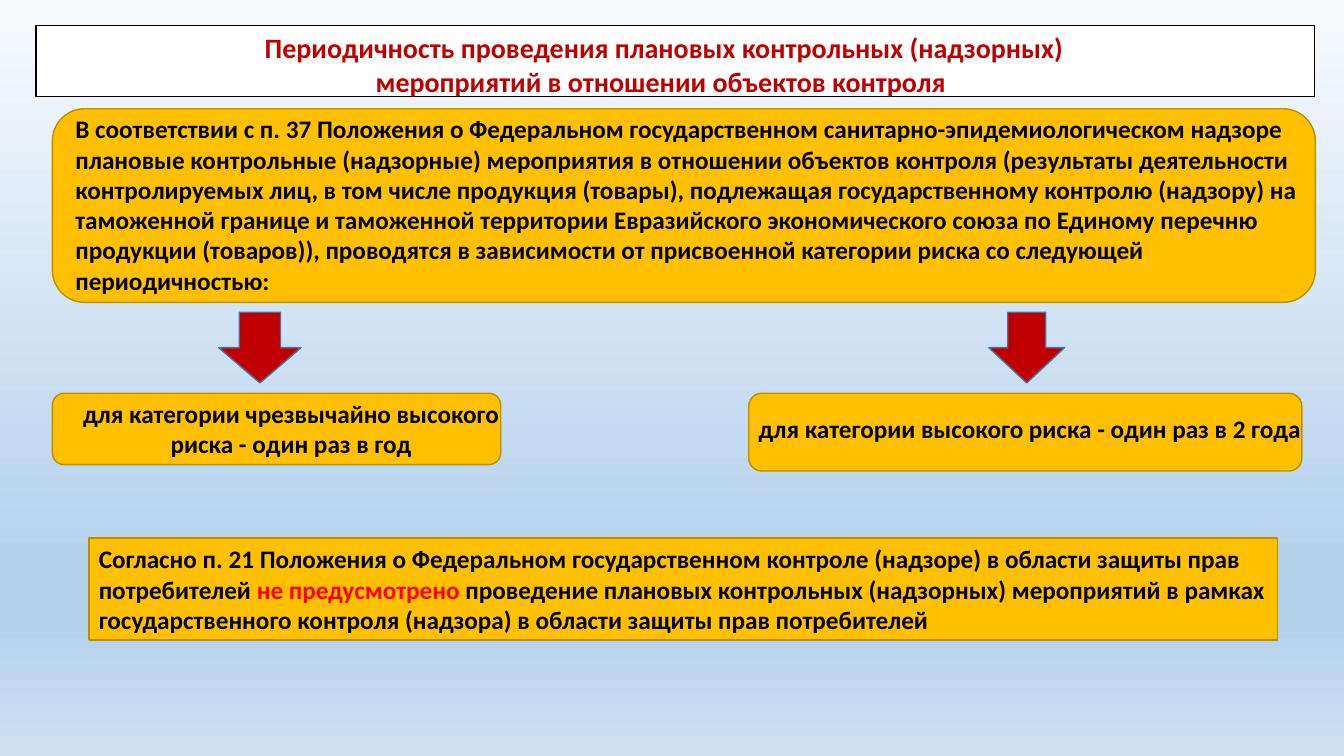
import lxml.etree
import pptx
import pptx.dml.color
import pptx.enum.shapes
import pptx.enum.text
import pptx.oxml.ns
import pptx.util

Cm = pptx.util.Cm
Shape = pptx.enum.shapes.MSO_SHAPE
Align = pptx.enum.text.PP_ALIGN
Anchor = pptx.enum.text.MSO_ANCHOR


def colour(value):
    return pptx.dml.color.RGBColor.from_string(value)


class RiskSlide:
    font = "Calibri"
    black = "000000"
    white = "FFFFFF"
    red = "C00000"
    alert = "FF0000"
    amber = "FFC000"
    amber_edge = "BD8E00"
    blue_edge = "43739E"

    def __init__(self, deck):
        self.slide = deck.slides.add_slide(deck.slide_layouts[5])

    def background(self, stops):
        fill = self.slide.background.fill
        fill.gradient()
        fill.gradient_angle = 270
        qn = pptx.oxml.ns.qn
        stop_list = next(self.slide.element.iter(qn("a:gsLst")))
        for old_stop in list(stop_list):
            stop_list.remove(old_stop)
        for percent, value in stops:
            stop = lxml.etree.SubElement(stop_list, qn("a:gs"), pos=str(percent * 1000))
            lxml.etree.SubElement(stop, qn("a:srgbClr"), val=value)

    def paint(self, shape, fill, edge):
        shape.fill.solid()
        shape.fill.fore_color.rgb = colour(fill)
        shape.line.color.rgb = colour(edge)
        shape.line.width = pptx.util.Pt(1)

    def wording(self, shape, parts, size=18, align=Align.LEFT, anchor=Anchor.TOP, wrap=True):
        frame = shape.text_frame
        frame.auto_size = pptx.enum.text.MSO_AUTO_SIZE.NONE
        frame.word_wrap = wrap
        frame.vertical_anchor = anchor
        paragraph = frame.paragraphs[0]
        paragraph.alignment = align
        for text, value in parts:
            run = paragraph.add_run()
            run.text = text
            run.font.name = self.font
            run.font.size = pptx.util.Pt(size)
            run.font.bold = True
            run.font.color.rgb = colour(value)

    def title(self, text, left, top, width, height, inset_left, inset_right):
        heading = self.slide.shapes.title
        heading.left, heading.top = Cm(left), Cm(top)
        heading.width, heading.height = Cm(width), Cm(height)
        self.paint(heading, self.white, self.black)
        heading.text_frame.margin_left = Cm(inset_left)
        heading.text_frame.margin_right = Cm(inset_right)
        self.wording(heading, [(text, self.red)], size=20, align=Align.CENTER)

    def panel(self, kind, left, top, width, height, fill=amber, edge=amber_edge):
        shape = self.slide.shapes.add_shape(kind, Cm(left), Cm(top), Cm(width), Cm(height))
        shape.shadow.inherit = False
        self.paint(shape, fill, edge)
        return shape

    def arrow(self, left, width):
        self.panel(Shape.DOWN_ARROW, left, 7.87, width, 1.78, self.red, self.blue_edge)

    def label(self, text, left, top, width, height, **style):
        box = self.slide.shapes.add_textbox(Cm(left), Cm(top), Cm(width), Cm(height))
        self.wording(box, [(text, self.black)], **style)


def main():
    deck = pptx.Presentation()
    deck.slide_width, deck.slide_height = Cm(33.87), Cm(19.05)
    page = RiskSlide(deck)
    page.background([(0, "F7FAFD"), (74, "B5D2EC"), (83, "B5D2EC"), (100, "CEE1F2")])

    page.title(
        "Периодичность проведения плановых контрольных (надзорных) "
        "мероприятий в отношении объектов контроля ",
        0.91, 0.64, 32.21, 1.8, inset_left=5.18, inset_right=5.74,
    )

    page.panel(Shape.ROUNDED_RECTANGLE, 18.87, 9.91, 13.94, 1.96)
    page.panel(Shape.ROUNDED_RECTANGLE, 1.32, 9.91, 11.3, 1.8)
    page.panel(Shape.ROUNDED_RECTANGLE, 1.32, 2.74, 31.83, 4.88)

    page.label(
        "В соответствии с п. 37 Положения о Федеральном государственном "
        "санитарно-эпидемиологическом надзоре плановые контрольные (надзорные) "
        "мероприятия в отношении объектов контроля (результаты деятельности "
        "контролируемых лиц, в том числе продукция (товары), подлежащая "
        "государственному контролю (надзору) на таможенной границе и таможенной "
        "территории Евразийского экономического союза по Единому перечню продукции "
        "(товаров)), проводятся в зависимости от присвоенной категории риска со "
        "следующей периодичностью:",
        1.65, 2.74, 31.45, 4.88,
    )
    page.label(
        "для категории чрезвычайно высокого риска - один раз в год",
        1.32, 9.91, 12.04, 1.8, align=Align.CENTER,
    )
    page.label(
        "для категории высокого риска - один раз в 2 года",
        18.87, 10.29, 14.27, 1.02, wrap=False,
    )

    page.arrow(5.51, 2.08)
    page.arrow(24.92, 1.91)

    consumer_rights = page.panel(Shape.RECTANGLE, 2.24, 13.56, 29.95, 2.57)
    page.wording(
        consumer_rights,
        [
            ("Согласно п. 21 Положения о Федеральном государственном контроле "
             "(надзоре) в области защиты прав потребителей ", page.black),
            ("не предусмотрено ", page.alert),
            ("проведение плановых контрольных (надзорных) мероприятий в рамках "
             "государственного контроля (надзора) в области защиты прав "
             "потребителей", page.black),
        ],
        anchor=Anchor.MIDDLE,
    )
    deck.save("out.pptx")


if __name__ == "__main__":
    main()
